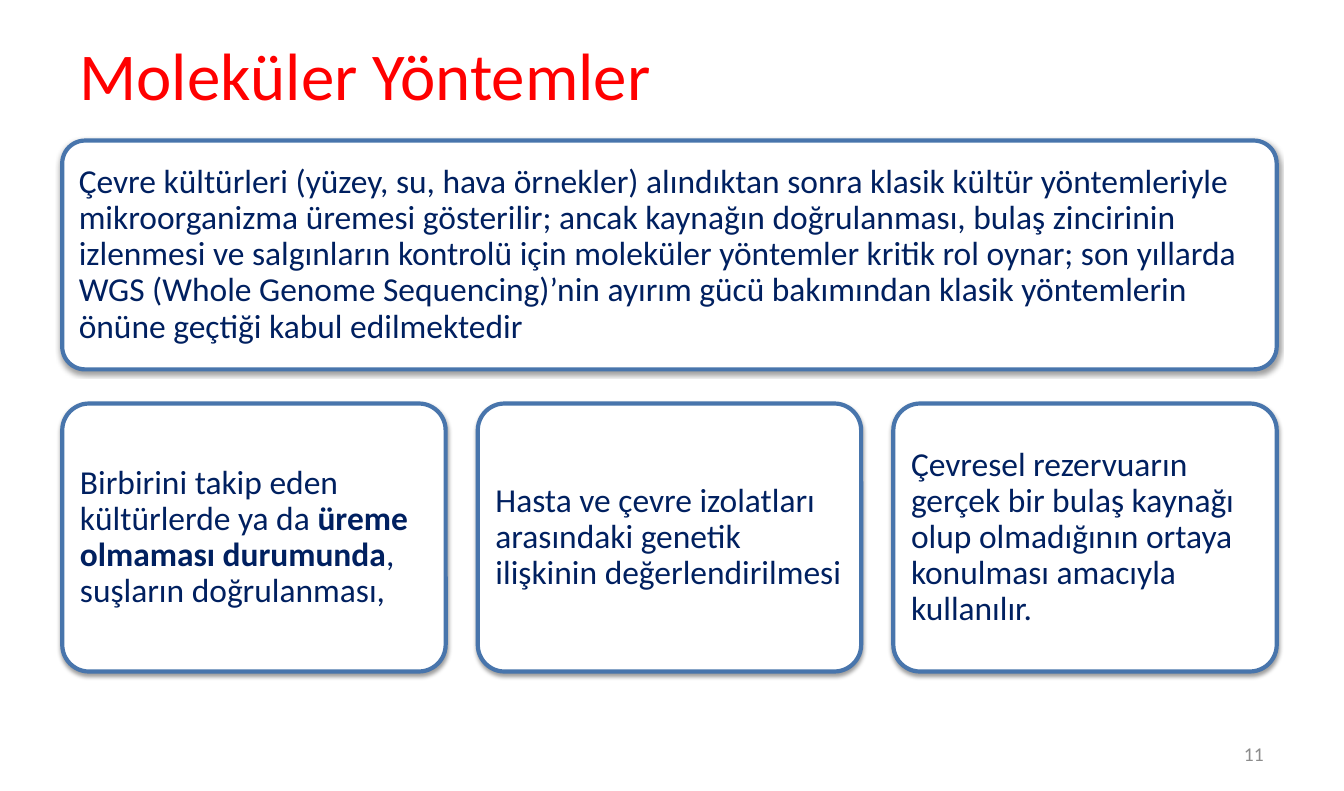
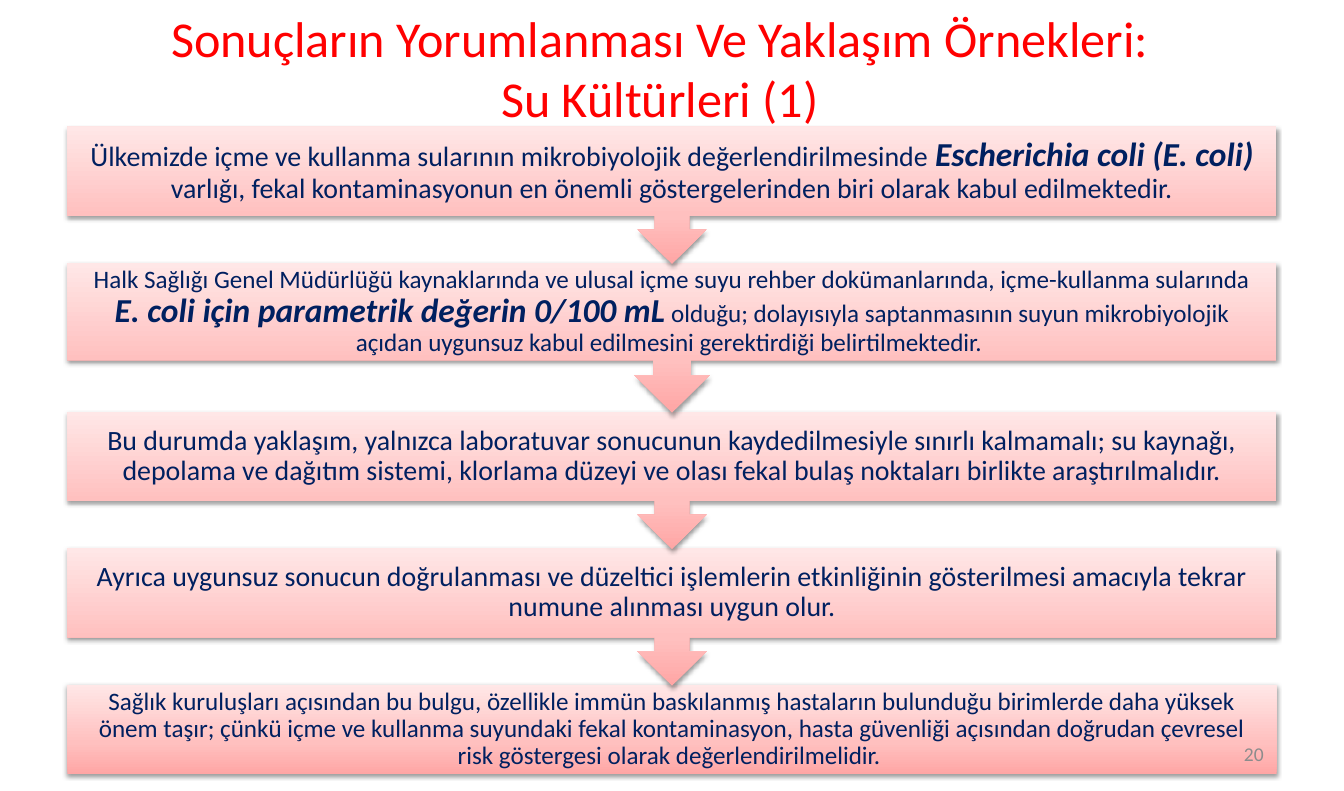
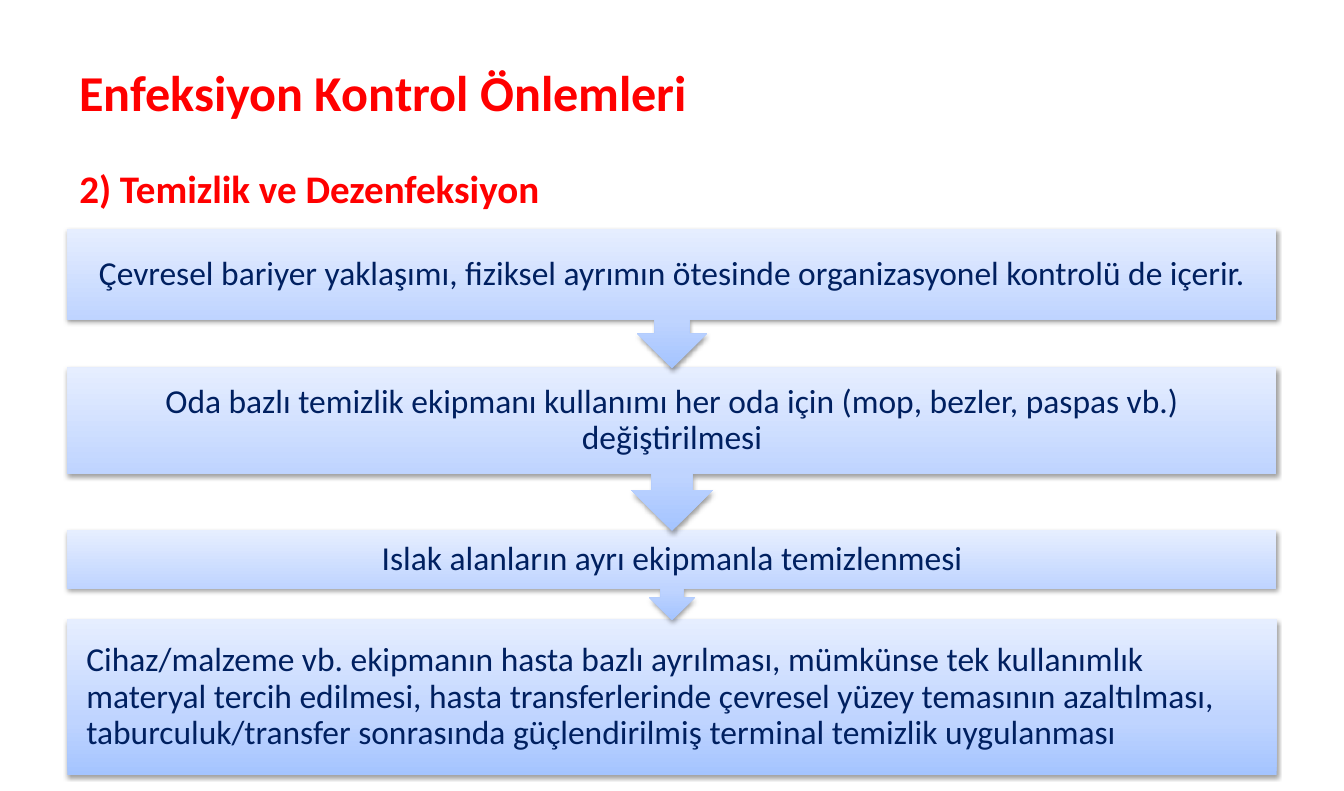
from pptx import Presentation
from pptx.dml.color import RGBColor
from pptx.enum.shapes import MSO_SHAPE
from pptx.enum.text import MSO_ANCHOR, PP_ALIGN
from pptx.oxml import parse_xml
from pptx.oxml.ns import nsdecls, qn
from pptx.util import Pt

PX = 9144  # 100 px to the inch
ROUND, RECT = MSO_SHAPE.ROUNDED_RECTANGLE, MSO_SHAPE.RECTANGLE
CALLOUT = MSO_SHAPE.DOWN_ARROW_CALLOUT
MID, TOP = MSO_ANCHOR.MIDDLE, MSO_ANCHOR.TOP
LEFT, CENTER, RIGHT = PP_ALIGN.LEFT, PP_ALIGN.CENTER, PP_ALIGN.RIGHT

COLORS = {"title": "FF0000", "text": "002060", "number": "8C8C8C",
          "white": "FFFFFF", "edge": "4875AC"}
PINK = ((0, "FFA6A5"), (35, "FFC0BF"), (100, "FFE7E7"))
BLUE = ((0, "A4C4FF"), (35, "BFD4FF"), (100, "E6EEFF"))
BOLD = {"bold": True}
STRONG = {"size": Pt(24), "bold": True, "italic": True}

# A text is a list of runs: (words, format values that differ)
INTRO = [("Çevre kültürleri (yüzey, su, hava örnekler) alındıktan sonra klasik kültür yöntemleriyle mikroorganizma üremesi gösterilir; ancak kaynağın doğrulanması, bulaş zincirinin izlenmesi ve salgınların kontrolü için moleküler yöntemler kritik rol oynar; son yıllarda WGS (Whole Genome Sequencing)’nin ayırım gücü bakımından klasik yöntemlerin önüne geçtiği kabul edilmektedir", {})]
CARDS = [
    [("Birbirini takip eden kültürlerde ya da ", {}),
     ("üreme olmaması durumunda", BOLD),
     (", suşların doğrulanması,", {})],
    [("Hasta ve çevre izolatları arasındaki genetik ilişkinin değerlendirilmesi", {})],
    [("Çevresel rezervuarın gerçek bir bulaş kaynağı olup olmadığının ortaya konulması amacıyla kullanılır.", {})],
]

# Step: height, side inset, text size, alignment, runs
WATER = [
    (137, 16, 20, CENTER, [
        ("Ülkemizde içme ve kullanma sularının mikrobiyolojik değerlendirilmesinde ", {}),
        ("Escherichia coli (E. coli) ", STRONG),
        ("varlığı, fekal kontaminasyonun en önemli göstergelerinden biri olarak kabul edilmektedir.", {})]),
    (149, 14, 18, CENTER, [
        ("Halk Sağlığı Genel Müdürlüğü kaynaklarında ve ulusal içme suyu rehber dokümanlarında, içme-kullanma sularında ", {}),
        ("E. coli için parametrik değerin 0/100 mL", STRONG),
        (" olduğu; dolayısıyla saptanmasının suyun mikrobiyolojik açıdan uygunsuz kabul edilmesini gerektirdiği belirtilmektedir. ", {})]),
    (137, 16, 20, CENTER, [("Bu durumda yaklaşım, yalnızca laboratuvar sonucunun kaydedilmesiyle sınırlı kalmamalı; su kaynağı, depolama ve dağıtım sistemi, klorlama düzeyi ve olası fekal bulaş noktaları birlikte araştırılmalıdır.", {})]),
    (137, 16, 20, CENTER, [("Ayrıca uygunsuz sonucun doğrulanması ve düzeltici işlemlerin etkinliğinin gösterilmesi amacıyla tekrar numune alınması uygun olur.", {})]),
    (89, 14, 18, CENTER, [("Sağlık kuruluşları açısından bu bulgu, özellikle immün baskılanmış hastaların bulunduğu birimlerde daha yüksek önem taşır; çünkü içme ve kullanma suyundaki fekal kontaminasyon, hasta güvenliği açısından doğrudan çevresel risk göstergesi olarak değerlendirilmelidir. ", {})]),
]
CLEAN = [
    (139, 19, 24, CENTER, [("Çevresel bariyer yaklaşımı, fiziksel ayrımın ötesinde organizasyonel kontrolü de içerir.", {})]),
    (163, 19, 24, CENTER, [("Oda bazlı temizlik ekipmanı kullanımı her oda için (mop, bezler, paspas vb.) değiştirilmesi", {})]),
    (90, 19, 24, CENTER, [("Islak alanların ayrı ekipmanla temizlenmesi", {})]),
    (155, 19, 24, LEFT, [("Cihaz/malzeme vb. ekipmanın hasta bazlı ayrılması, mümkünse tek kullanımlık materyal tercih edilmesi, hasta transferlerinde çevresel yüzey temasının azaltılması, taburculuk/transfer sonrasında güçlendirilmiş terminal temizlik uygulanması", {})]),
]


def rgb(name):
    return RGBColor.from_string(COLORS[name])


def put(item, values):
    for key, value in values.items():
        setattr(item, key, value)


def place(shape, *box):
    keys = ("left", "top", "width", "height")
    put(shape, {key: n * PX for key, n in zip(keys, box)})


def setup(frame, side, end, anchor=MID):
    put(frame, {"margin_left": side * PX, "margin_right": side * PX,
                "margin_top": end * PX, "margin_bottom": end * PX,
                "vertical_anchor": anchor, "word_wrap": True})


def write(frame, runs, size, align=LEFT, color="text", **para):
    line = frame.paragraphs[0]
    put(line, {"alignment": align, **para})
    for words, extra in runs:
        run = line.add_run()
        run.text = words
        put(run.font, {"name": "Calibri", "size": Pt(size), **extra})
        run.font.color.rgb = rgb(color)


def shade(shape):
    """Add the soft shadow below a shape."""
    shape._element.spPr.append(parse_xml(
        f'<a:effectLst {nsdecls("a")}><a:outerShdw blurRad="40000" dist="20000" '
        'dir="5400000" rotWithShape="0"><a:srgbClr val="000000">'
        '<a:alpha val="38000"/></a:srgbClr></a:outerShdw></a:effectLst>'))


def blend(shape, stops):
    """Fill a shape with a gradient that rises from its foot."""
    marks = "".join(f'<a:gs pos="{at * 1000}"><a:srgbClr val="{color}"/></a:gs>'
                    for at, color in stops)
    shape._element.spPr.insert(2, parse_xml(
        f'<a:gradFill {nsdecls("a")} rotWithShape="1"><a:gsLst>{marks}</a:gsLst>'
        '<a:lin ang="16200000" scaled="0"/></a:gradFill>'))


def style(deck):
    """Set the shared title style on the slide master."""
    level = deck.slide_master.element.find(".//" + qn("p:titleStyle")).find(qn("a:lvl1pPr"))
    level.set("algn", "l")
    font = level.find(qn("a:defRPr"))
    font.set("sz", "3600")
    fill = font.find(qn("a:solidFill"))
    fill.clear()
    fill.append(parse_xml(f'<a:srgbClr {nsdecls("a")} val="{COLORS["title"]}"/>'))


def start(deck, layout, title, left, top, align=LEFT, **font):
    slide = deck.slides.add_slide(deck.slide_layouts[layout])
    head = slide.shapes.title
    place(head, left, top, 1205, 131)
    setup(head.text_frame, 12, 6)
    line = head.text_frame.paragraphs[0]
    line.text = title
    line.alignment = align
    for run in line.runs:
        put(run.font, font)
    return slide


def number(slide, value):
    box = slide.shapes.add_textbox(*(n * PX for n in (959, 730, 312, 42)))
    setup(box.text_frame, 12, 6)
    write(box.text_frame, [(value, {})], 14, RIGHT, "number")


def card(slide, runs, *box):
    shape = slide.shapes.add_shape(ROUND, *(n * PX for n in box))
    shape.adjustments[0] = 0.1
    shape.fill.solid()
    shape.fill.fore_color.rgb = rgb("white")
    shape.line.color.rgb = rgb("edge")
    shape.line.width = Pt(3)
    shade(shape)
    setup(shape.text_frame, 10, 10)
    write(shape.text_frame, runs, 24, line_spacing=0.9)


def flow(slide, steps, top, stops):
    """Stack the steps, each callout reaching 1 px into the next."""
    tops = [top + sum(step[0] - 1 for step in steps[:i]) for i in range(len(steps))]
    kinds = [CALLOUT] * (len(steps) - 1) + [RECT]
    for kind, y, step in reversed(list(zip(kinds, tops, steps))):
        high, side, size, align, runs = step
        shape = slide.shapes.add_shape(kind, 67 * PX, y * PX, 1205 * PX, high * PX)
        blend(shape, stops)
        shape.line.fill.background()
        shade(shape)
        setup(shape.text_frame, side, 0)
        write(shape.text_frame, runs, size, align, line_spacing=0.9)


def methods(deck):
    slide = start(deck, 5, "Moleküler Yöntemler", 67, 8, size=Pt(48))
    card(slide, INTRO, 62, 140, 1210, 228)
    wide = 382
    gap = (1210 - 3 * wide) // 2
    for i, runs in enumerate(CARDS):
        card(slide, runs, 62 + i * (wide + gap), 402, wide, 267)
    number(slide, "11")


def water(deck):
    slide = start(deck, 5, "Sonuçların Yorumlanması Ve Yaklaşım Örnekleri:\vSu Kültürleri (1)",
                  55, 2, CENTER)
    flow(slide, WATER, 126, PINK)
    number(slide, "20")


def clean(deck):
    slide = start(deck, 1, "Enfeksiyon Kontrol Önlemleri", 67, 26, bold=True)
    body = slide.placeholders[1]
    place(body, 67, 158, 1248, 614)
    setup(body.text_frame, 12, 6, TOP)
    props = body.text_frame.paragraphs[0]._p.get_or_add_pPr()
    put(props, {})
    props.set("marL", "0")
    props.set("indent", "0")
    props.append(parse_xml(f'<a:buNone {nsdecls("a")}/>'))
    write(body.text_frame, [("2) Temizlik ve Dezenfeksiyon", BOLD)], 28, LEFT, "title",
          space_before=Pt(0), space_after=Pt(6))
    flow(slide, CLEAN, 228, BLUE)


def main():
    deck = Presentation()
    put(deck, {"slide_width": 1339 * PX, "slide_height": 788 * PX})
    style(deck)
    for build in (methods, water, clean):
        build(deck)
    deck.save("out.pptx")


if __name__ == "__main__":
    main()
